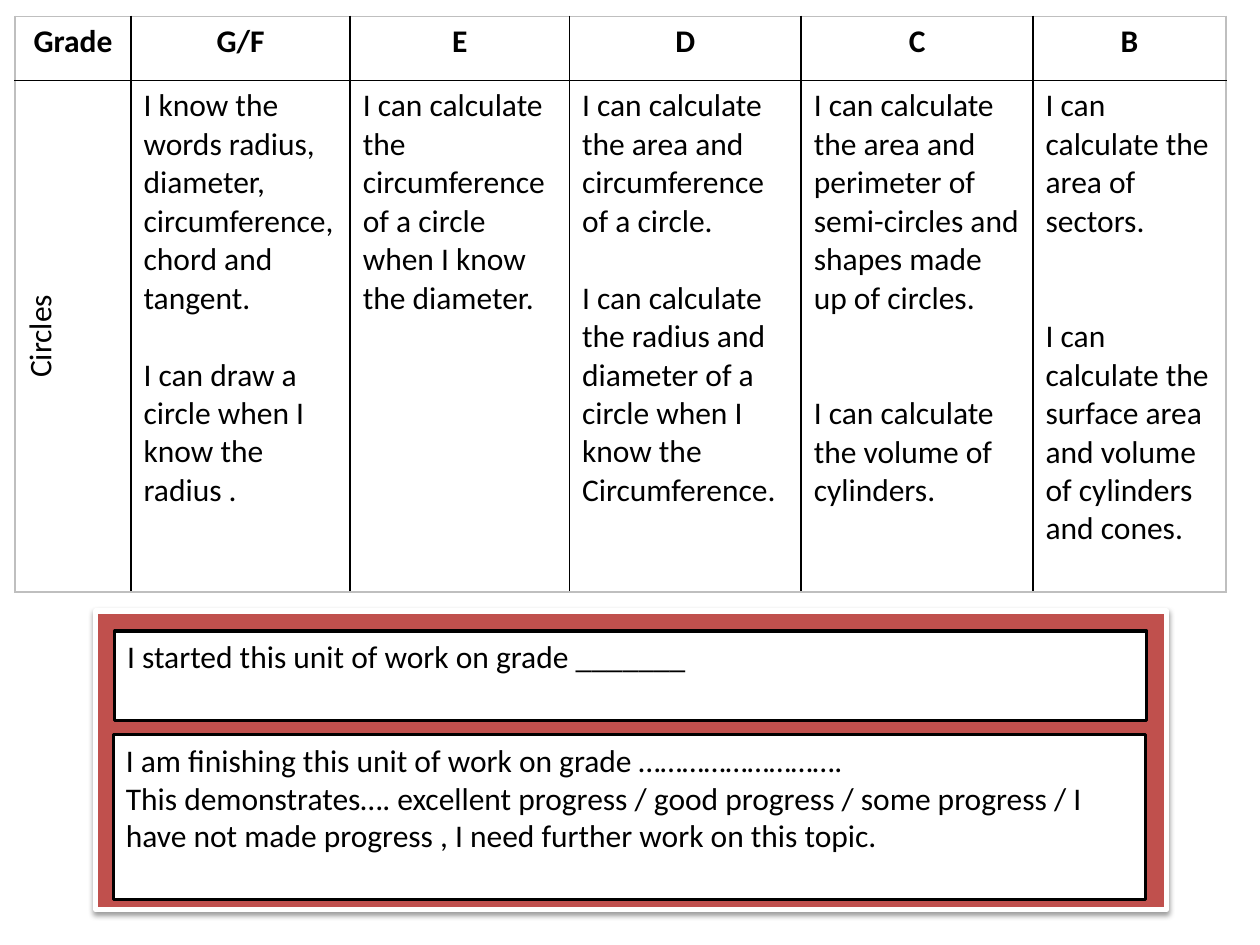
from lxml import etree
from pptx import Presentation
from pptx.dml.color import RGBColor
from pptx.enum.shapes import MSO_SHAPE
from pptx.enum.text import MSO_ANCHOR, PP_ALIGN
from pptx.oxml import parse_xml
from pptx.oxml.ns import nsdecls, qn
from pptx.util import Inches, Pt

RECT = MSO_SHAPE.RECTANGLE
TOP = MSO_ANCHOR.TOP
LEFT, CENTER = PP_ALIGN.LEFT, PP_ALIGN.CENTER

COLORS = {"text": "000000", "paper": "FFFFFF", "panel": "C0504D",
          "grid": "000000", "frame": "BFBFBF"}
FONT, SIZE, LINE = "Calibri", 18, 22  # LINE: height of one text line in points

COLUMNS = [0.92, 1.74, 1.74, 1.84, 1.84, 1.53]
ROWS = [0.51, 4.06]
GRADES = ["Grade", "G/F", "E", "D", "C", "B"]
# For each grade: its statements and the number of lines left between them
STATEMENTS = [
    (["I know the words radius, diameter, circumference, chord and tangent.",
      "I can draw a circle when I know the radius ."], 1),
    (["I can calculate the circumference of a circle when I know the diameter."], 0),
    (["I can calculate the area and circumference of a circle.",
      "I can calculate the radius and diameter of a circle when I know the Circumference."], 1),
    (["I can calculate the area and perimeter of semi-circles and shapes made up of circles.",
      "I can calculate the volume of cylinders."], 2),
    (["I can calculate the area of sectors.",
      "I can calculate the surface area and volume of cylinders and cones."], 2),
]
START = ["I started this unit of work on grade _______"]
FINISH = ["I am finishing this unit of work on grade ……………………….",
          "This demonstrates…. excellent progress / good progress / some progress / "
          "I have not made progress , I need further work on this topic."]


def rgb(name):
    return RGBColor.from_string(COLORS[name])


def write(tf, lines, align=LEFT, bold=False, gap=0):
    tf.text = "\n".join(lines)
    tf.word_wrap = True
    for i, p in enumerate(tf.paragraphs):
        p.alignment = align
        p.space_before = Pt(gap * LINE if i else 0)
        for r in p.runs:
            r.font.name, r.font.size, r.font.bold = FONT, Pt(SIZE), bold
            r.font.color.rgb = rgb("text")


def add_box(slide, place, fill, line, width, lines=None):
    s = slide.shapes.add_shape(RECT, *map(Inches, place))
    s.shadow.inherit = False
    s.fill.solid()
    s.fill.fore_color.rgb = rgb(fill)
    s.line.color.rgb = rgb(line)
    s.line.width = Pt(width)
    if lines:
        write(s.text_frame, lines)
        s.text_frame.vertical_anchor = TOP
    return s


def add_shadow(shape):
    effects = shape._element.spPr.find(qn("a:effectLst"))
    effects.append(parse_xml(
        f'<a:outerShdw {nsdecls("a")} blurRad="{Pt(3.1)}" dist="{Pt(1.6)}" '
        'dir="5400000" rotWithShape="0"><a:srgbClr val="000000">'
        '<a:alpha val="38000"/></a:srgbClr></a:outerShdw>'))


def set_borders(cell, outer):
    """Draw the four sides; outer holds the sides on the table's edge."""
    tcPr = cell._tc.get_or_add_tcPr()
    for i, side in enumerate("LRTB"):
        ln = etree.Element(qn(f"a:ln{side}"), w=str(Pt(1)))
        fill = etree.SubElement(ln, qn("a:solidFill"))
        color = COLORS["frame" if side in outer else "grid"]
        etree.SubElement(fill, qn("a:srgbClr"), val=color)
        tcPr.insert(i, ln)


def add_grade_table(slide):
    place = map(Inches, (0.12, 0.13, sum(COLUMNS), sum(ROWS)))
    table = slide.shapes.add_table(len(ROWS), len(COLUMNS), *place).table
    table.first_row = table.horz_banding = False
    for column, width in zip(table.columns, COLUMNS):
        column.width = Inches(width)
    for row, height in zip(table.rows, ROWS):
        row.height = Inches(height)

    # Grade headings, topic and statements
    for c, grade in enumerate(GRADES):
        write(table.cell(0, c).text_frame, [grade], CENTER, bold=True)
    topic = table.cell(1, 0)
    write(topic.text_frame, ["Circles"], CENTER)
    topic._tc.get_or_add_tcPr().set("vert", "vert270")
    for c, (lines, gap) in enumerate(STATEMENTS, 1):
        write(table.cell(1, c).text_frame, lines, gap=gap)

    # Fill and borders
    for r in range(len(ROWS)):
        for c in range(len(COLUMNS)):
            cell = table.cell(r, c)
            cell.fill.background()
            outer = "T" if r == 0 else "B"
            outer += {0: "L", len(COLUMNS) - 1: "R"}.get(c, "")
            set_borders(cell, outer)


def main():
    prs = Presentation()
    prs.slide_width, prs.slide_height = Inches(10), Inches(7.5)
    slide = prs.slides.add_slide(prs.slide_layouts[6])

    # Progress panel
    add_shadow(add_box(slide, (0.76, 4.85, 8.5, 2.37), "panel", "paper", 3))
    add_box(slide, (0.91, 5.01, 8.19, 0.71), "paper", "grid", 2, START)
    add_box(slide, (0.9, 5.83, 8.19, 1.31), "paper", "grid", 2, FINISH)

    # Grade criteria
    add_grade_table(slide)
    prs.save("out.pptx")


if __name__ == "__main__":
    main()
